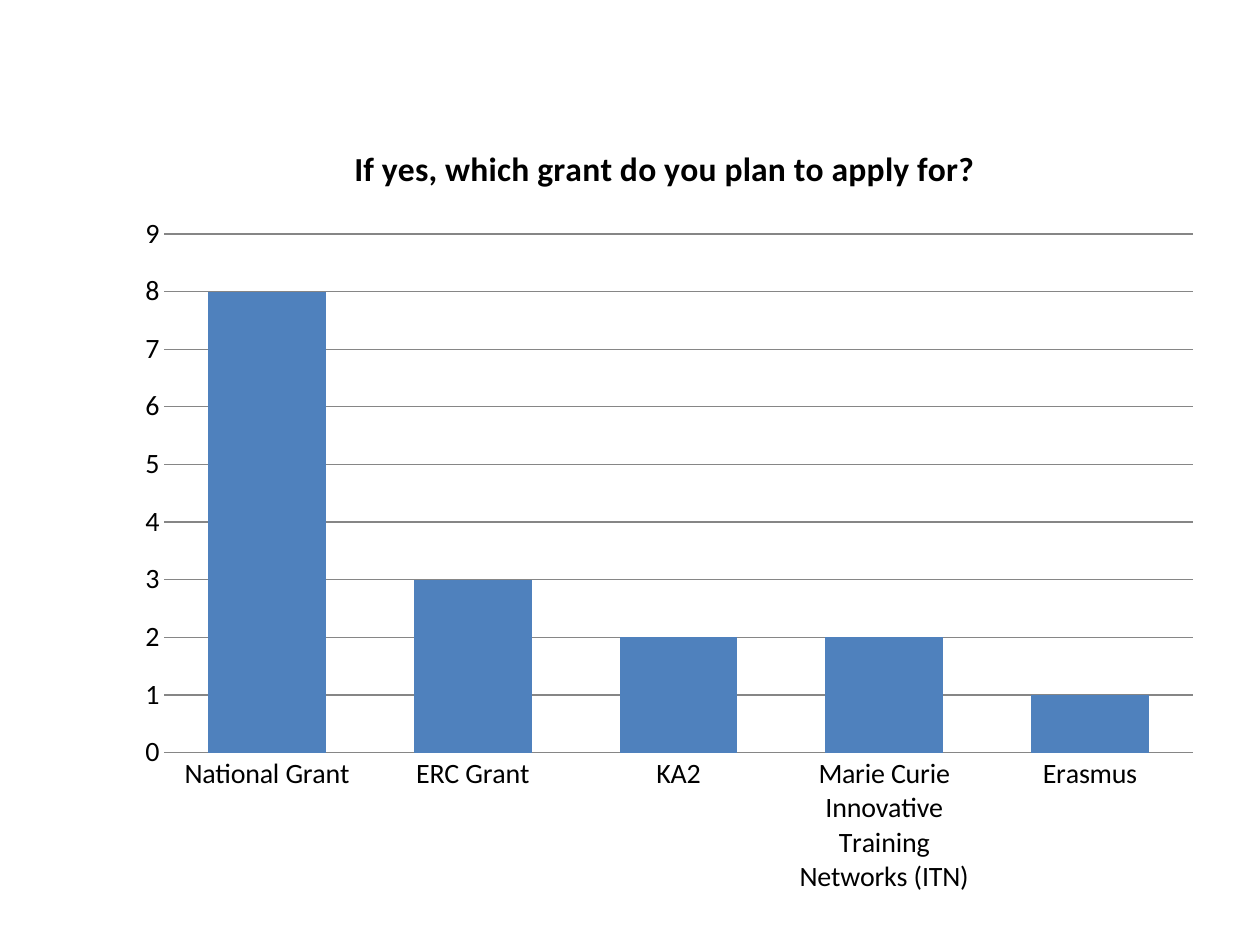
from dataclasses import dataclass

from pptx import Presentation
from pptx import util as u
from pptx.chart.data import CategoryChartData
from pptx.dml.color import RGBColor
from pptx.enum import chart as ch

WIDTH, HEIGHT = u.Inches(10), u.Inches(7.5)
FONT = "Calibri"
BLACK, BLUE, GRAY = "000000", "4F81BD", "868686"


@dataclass
class Answer:
    grant: str
    count: int


ANSWERS = [
    Answer("National Grant", 8),
    Answer("ERC Grant", 3),
    Answer("KA2", 2),
    Answer("Marie Curie Innovative Training Networks (ITN)", 2),
    Answer("Erasmus", 1),
]


def color(value: str) -> RGBColor:
    return RGBColor.from_string(value)


def set_font(font, size: float, bold: bool = False) -> None:
    font.name, font.size, font.bold = FONT, u.Pt(size), bold
    font.color.rgb = color(BLACK)


def set_line(line) -> None:
    line.width = u.Pt(0.75)
    line.color.rgb = color(GRAY)


def add_grant_chart(page, answers: list[Answer]):
    data = CategoryChartData(number_format="General")
    data.categories = [answer.grant for answer in answers]
    data.add_series("Series 1", [answer.count for answer in answers])
    frame = page.shapes.add_chart(
        ch.XL_CHART_TYPE.COLUMN_CLUSTERED,
        int(WIDTH * 0.098), int(HEIGHT * 0.123),
        int(WIDTH * 0.866), int(HEIGHT * 0.84), data)
    return frame.chart


def add_title(chart, title: str) -> None:
    chart.has_title = True
    chart.chart_title.include_in_layout = False
    para = chart.chart_title.text_frame.paragraphs[0]
    span = para.add_run()
    span.text = title
    set_font(span.font, 19.2, bold=True)


def style_columns(chart) -> None:
    plot = chart.plots[0]
    plot.gap_width, plot.overlap = 75, -25
    plot.vary_by_categories = False
    fill = plot.series[0].format.fill
    fill.solid()
    fill.fore_color.rgb = color(BLUE)


def style_axes(chart) -> None:
    for axis in (chart.category_axis, chart.value_axis):
        axis.major_tick_mark = axis.minor_tick_mark = ch.XL_TICK_MARK.NONE
        set_font(axis.tick_labels.font, 16)
    set_line(chart.category_axis.format.line)

    counts = chart.value_axis
    counts.minimum_scale, counts.maximum_scale, counts.major_unit = 0, 9, 1
    counts.format.line.fill.background()
    counts.has_major_gridlines = True
    set_line(counts.major_gridlines.format.line)


def main() -> None:
    deck = Presentation()
    deck.slide_width, deck.slide_height = WIDTH, HEIGHT
    page = deck.slides.add_slide(deck.slide_layouts[6])
    chart = add_grant_chart(page, ANSWERS)
    chart.has_legend = False
    set_font(chart.font, 16)
    add_title(chart, "If yes, which grant do you plan to apply for? ")
    style_columns(chart)
    style_axes(chart)
    deck.save("out.pptx")


if __name__ == "__main__":
    main()
